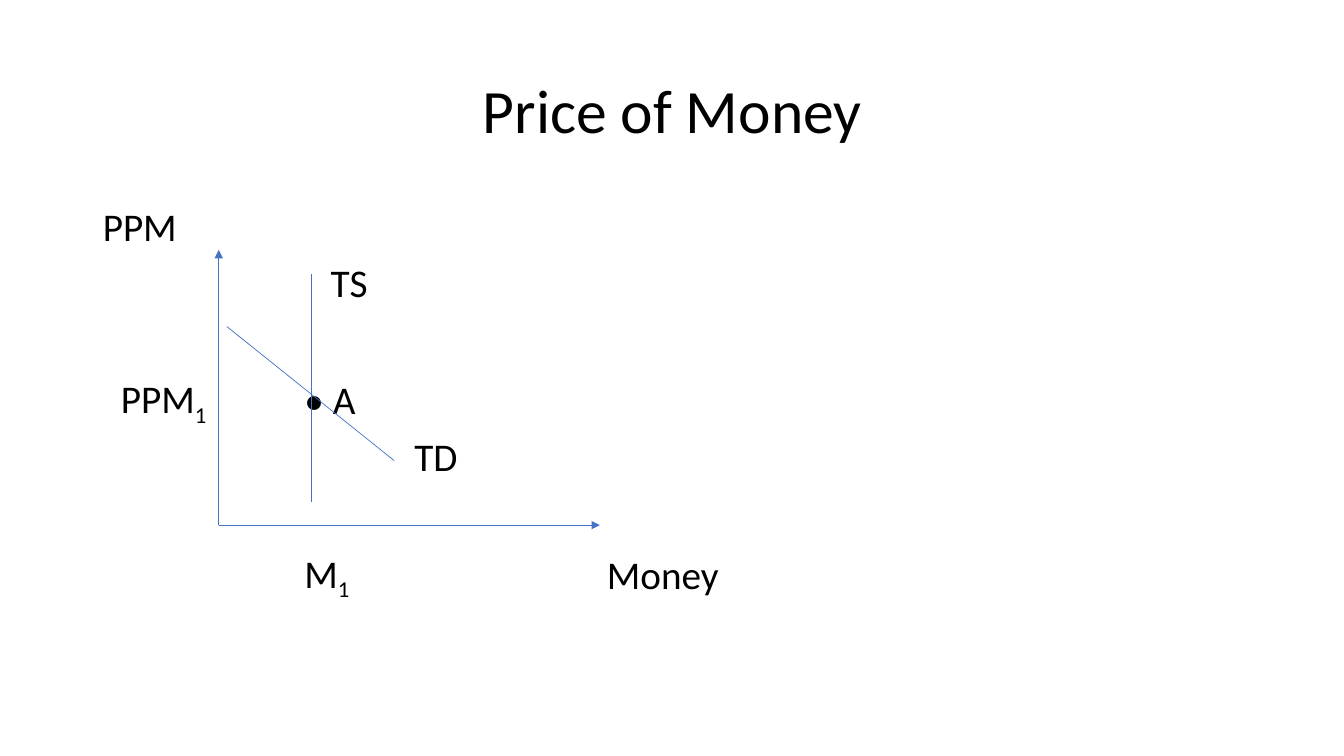
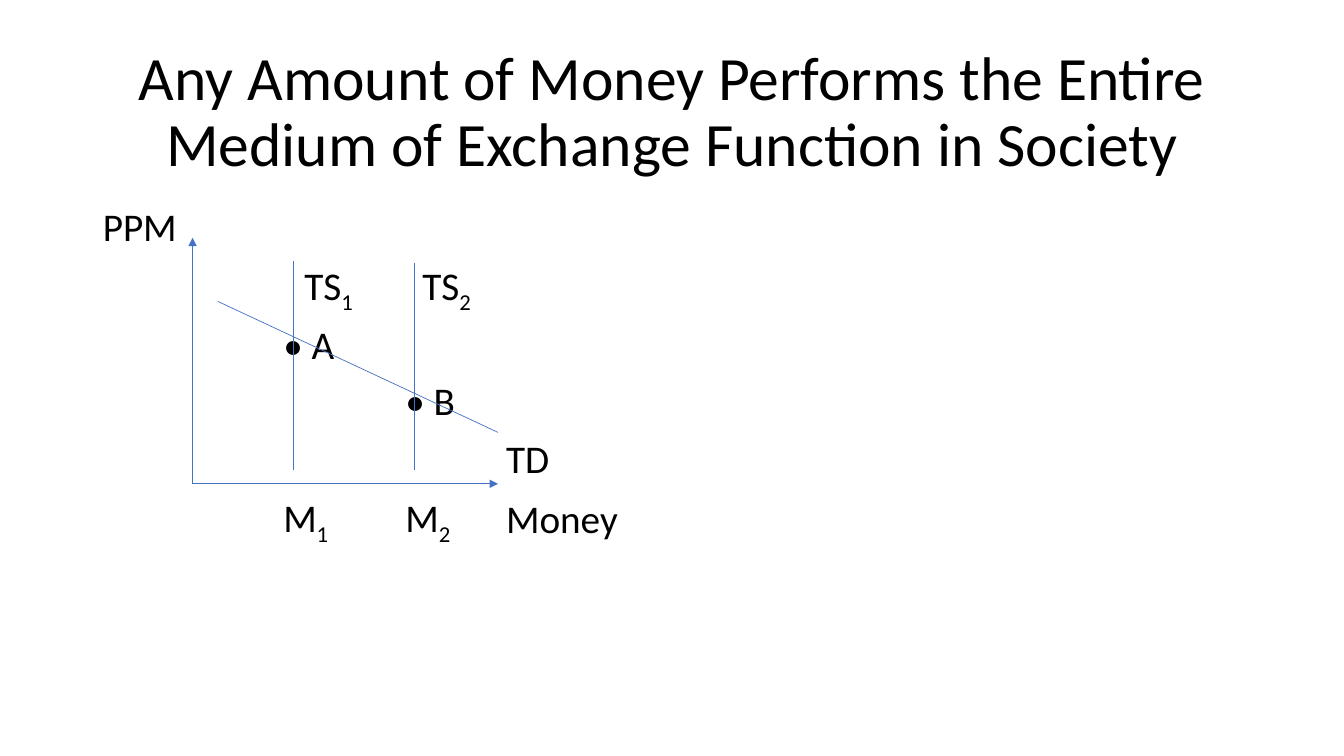
from lxml.etree import SubElement
from pptx import Presentation
from pptx.dml.color import RGBColor
from pptx.enum.shapes import MSO_CONNECTOR
from pptx.enum.text import MSO_ANCHOR, MSO_AUTO_SIZE, PP_ALIGN
from pptx.oxml.ns import qn
from pptx.util import Inches, Pt

FONT, INK, BLUE = "Calibri", "000000", "4472C4"
TITLE_BOX = (0.92, 0.4, 11.5, 1.45)
LEFT = 1.02             # left edge of the label area
LABEL = (1.5, 0.43)     # width and height of a label


def color(code):
    return RGBColor.from_string(code)


def set_layout(layout):
    """Give the title of the layout its place."""
    title = layout.placeholders[0]
    title.left, title.top, title.width, title.height = map(Inches, TITLE_BOX)
    title.text_frame.vertical_anchor = MSO_ANCHOR.MIDDLE


def add_run(para, text, size, sub=False):
    run = para.add_run()
    run.text = text
    font = run.font
    font.name, font.size = FONT, Pt(size)
    font.color.rgb = color(INK)
    if sub:
        run._r.get_or_add_rPr().set("baseline", "-25000")


def add_title(slide, lines):
    frame = slide.shapes.title.text_frame
    frame.auto_size = MSO_AUTO_SIZE.NONE
    para = frame.paragraphs[0]
    para.alignment, para.line_spacing = PP_ALIGN.CENTER, 0.9
    for i, line in enumerate(lines):
        if i:
            para.add_line_break()
        add_run(para, line, 44)


def add_label(slide, x, foot, text):
    """Stand a label on the height foot; "_" starts a subscript."""
    width, height = LABEL
    box = map(Inches, (x, foot - height, width, height))
    frame = slide.shapes.add_textbox(*box).text_frame
    frame.word_wrap = True
    frame.vertical_anchor = MSO_ANCHOR.BOTTOM
    frame.margin_left = frame.margin_right = 0
    frame.margin_top = frame.margin_bottom = 0
    para = frame.paragraphs[0]
    para.line_spacing = 0.9
    main, _, sub = text.partition("_")
    add_run(para, main, 28)
    if sub:
        add_run(para, sub, 28, sub=True)


def add_labels(slide, rows):
    """Rows are (foot, {x: label}), with x counted from LEFT."""
    for foot, labels in rows:
        for x, text in labels.items():
            add_label(slide, LEFT + x, foot, text)


def add_line(slide, start, end, arrow=False):
    points = map(Inches, (*start, *end))
    line = slide.shapes.add_connector(MSO_CONNECTOR.STRAIGHT, *points)
    line.line.color.rgb = color(BLUE)
    line.line.width = Pt(0.5)
    props = line._element.spPr
    if arrow:
        SubElement(props.find(qn("a:ln")), qn("a:tailEnd"), type="triangle")
    SubElement(props, qn("a:effectLst"))


def add_graph(slide, box, curves):
    """Draw axes along the left and bottom of box; curves count from its corner."""
    left, top, width, height = box
    base = top + height

    def at(x, y):
        return left + x, base - y

    for tip in ((0, height), (width, 0)):
        add_line(slide, at(0, 0), at(*tip), arrow=True)
    for start, end in curves:
        add_line(slide, at(*start), at(*end))


def add_slide(deck, title, rows, box, curves):
    slide = deck.slides.add_slide(deck.slide_layouts[5])
    add_title(slide, title)
    add_labels(slide, rows)
    add_graph(slide, box, curves)


def main():
    deck = Presentation()
    deck.slide_width, deck.slide_height = Inches(13.33), Inches(7.5)
    set_layout(deck.slide_layouts[5])

    add_slide(
        deck,
        ["Price of Money"],
        [
            (2.48, {0: "PPM"}),
            (3.04, {2.26: "TS"}),
            (4.2, {0.18: "PPM_1", 2: "• A"}),
            (4.76, {3.09: "TD"}),
            (5.93, {2: "M_1", 5: "Money"}),
        ],
        (2.17, 2.48, 3.78, 2.73),
        [((0.92, 2.49), (0.92, 0.23)), ((0.08, 1.97), (1.74, 0.64))],
    )
    add_slide(
        deck,
        ["Any Amount of Money Performs the Entire",
         "Medium of Exchange Function in Society"],
        [
            (2.48, {0: "PPM"}),
            (3.08, {2: "TS_1", 3.17: "TS_2"}),
            (3.65, {1.79: "• A"}),
            (4.21, {3: "• B"}),
            (4.78, {4: "TD"}),
            (5.38, {1.79: "M_1", 3: "M_2", 4: "Money"}),
        ],
        (1.91, 2.36, 3.03, 2.44),
        [((1, 2.21), (1, 0.14)), ((2.2, 2.19), (2.2, 0.14)),
         ((0.25, 1.81), (3.03, 0.51))],
    )
    deck.save("out.pptx")


if __name__ == "__main__":
    main()
